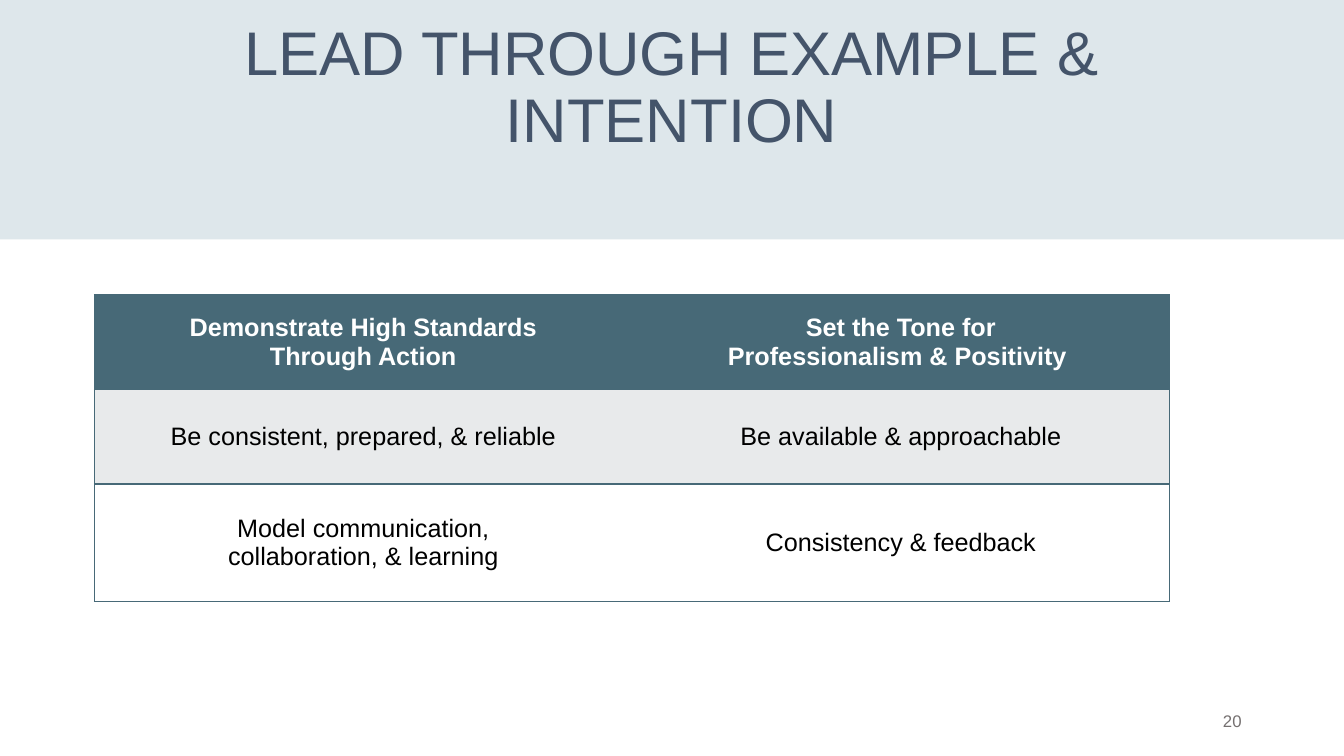
import pptx
import pptx.dml.color
import pptx.enum.shapes
import pptx.enum.text
import pptx.oxml
import pptx.oxml.ns
import pptx.util

EMU_PER_PX = 9525
FONT = "Arial"
COLORS = {
    "band": "D6E2E6",
    "title": "44546A",
    "teal": "476977",
    "shade": "E8EAEB",
    "white": "FFFFFF",
    "black": "000000",
    "number": "757070",
}
ALIGN = pptx.enum.text.PP_ALIGN
ANCHOR = pptx.enum.text.MSO_ANCHOR
ROWS = [
    (90, "teal", "white", [
        ["Demonstrate High Standards", "Through Action"],
        ["Set the Tone for", "Professionalism & Positivity "],
    ]),
    (90, "shade", "black", [
        ["Be consistent, prepared, & reliable"],
        ["Be available & approachable"],
    ]),
    (112, "white", "black", [
        ["Model communication,\ncollaboration, & learning"],
        ["Consistency & feedback"],
    ]),
]


def px(length):
    """Turn whole pixels into EMU."""
    return pptx.util.Emu(length * EMU_PER_PX)


def box(*lengths):
    """Turn left, top, width and height in pixels into EMU."""
    return [px(length) for length in lengths]


def rgb(name):
    """Look up a named colour."""
    return pptx.dml.color.RGBColor.from_string(COLORS[name])


def write_text(frame, lines, *, size, color, align=ALIGN.CENTER, bold=False, spacing=None):
    """Write one formatted paragraph per line."""
    frame.word_wrap = True
    for index, line in enumerate(lines):
        paragraph = frame.paragraphs[0] if index == 0 else frame.add_paragraph()
        paragraph.text = line
        paragraph.alignment = align
        paragraph.line_spacing = spacing
        for run in paragraph.runs:
            run.font.name = FONT
            run.font.size = pptx.util.Pt(size)
            run.font.bold = bold
            run.font.color.rgb = rgb(color)


def add_title(slide, text):
    """Place and format the title placeholder."""
    title = slide.shapes.title
    title.left, title.top, title.width, title.height = box(88, 25, 1104, 128)
    title.text_frame.auto_size = pptx.enum.text.MSO_AUTO_SIZE.NONE
    title.text_frame.vertical_anchor = ANCHOR.BOTTOM
    write_text(title.text_frame, [text], size=44, color="title", spacing=0.9)


def add_band(slide):
    """Add the translucent header band behind the title."""
    band = slide.shapes.add_shape(
        pptx.enum.shapes.MSO_SHAPE.RECTANGLE, *box(0, 0, 1280, 228))
    band.shadow.inherit = False
    band.line.fill.background()
    band.fill.solid()
    band.fill.fore_color.rgb = rgb("band")
    tint = band._element.spPr.find(".//" + pptx.oxml.ns.qn("a:srgbClr"))
    pptx.oxml.ns.qn("a:alpha")
    tint.append(pptx.oxml.parse_xml(
        f'<a:alpha {pptx.oxml.ns.nsdecls("a")} val="80000"/>'))
    slide.shapes.title._element.addprevious(band._element)


def set_borders(cell, sides):
    """Draw the given sides of a cell and clear the others."""
    properties = cell._tc.get_or_add_tcPr()
    for side in "LRTB":
        paint = (f'<a:solidFill><a:srgbClr val="{COLORS["teal"]}"/></a:solidFill>'
                 if side in sides else "<a:noFill/>")
        properties.append(pptx.oxml.parse_xml(
            f'<a:ln{side} {pptx.oxml.ns.nsdecls("a")} w="12700">{paint}</a:ln{side}>'))


def add_standards_table(slide):
    """Add the two-column table of leadership practices."""
    height = sum(row[0] for row in ROWS)
    table = slide.shapes.add_table(len(ROWS), 2, *box(90, 281, 1024, height)).table
    table.horz_banding = False
    for row_index, (row_height, fill, color, texts) in enumerate(ROWS):
        table.rows[row_index].height = px(row_height)
        for column_index, lines in enumerate(texts):
            cell = table.cell(row_index, column_index)
            cell.vertical_anchor = ANCHOR.MIDDLE
            set_borders(cell, "TB" + "LR"[column_index])
            cell.fill.solid()
            cell.fill.fore_color.rgb = rgb(fill)
            write_text(cell.text_frame, lines, size=18, color=color, bold=row_index == 0)


def add_page_number(slide, number):
    """Add the page number at the lower right."""
    frame = slide.shapes.add_textbox(*box(904, 667, 288, 38)).text_frame
    frame.vertical_anchor = ANCHOR.MIDDLE
    write_text(frame, [number], size=12, color="number", align=ALIGN.RIGHT)


def main():
    """Build and save the slide."""
    deck = pptx.Presentation()
    deck.slide_width, deck.slide_height = px(1280), px(720)
    slide = deck.slides.add_slide(deck.slide_layouts[5])
    add_title(slide, "LEAD THROUGH EXAMPLE & INTENTION")
    add_band(slide)
    add_standards_table(slide)
    add_page_number(slide, "20")
    deck.save("out.pptx")


if __name__ == "__main__":
    main()
